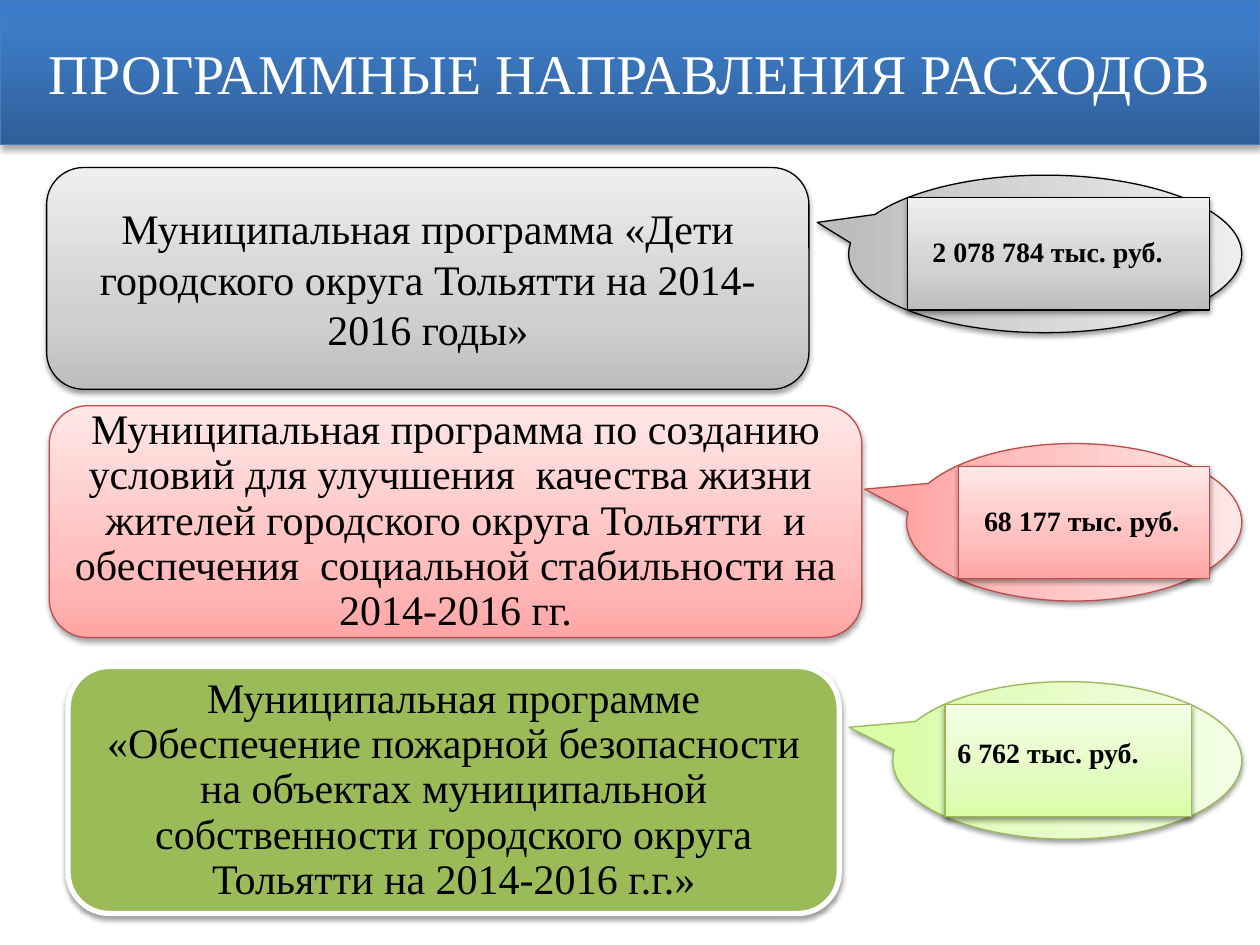
from copy import deepcopy
from dataclasses import dataclass
from typing import Any

from lxml.etree import SubElement
from pptx import Presentation
from pptx.dml.color import RGBColor
from pptx.enum.shapes import MSO_SHAPE
from pptx.enum.text import MSO_ANCHOR, PP_ALIGN
from pptx.oxml.ns import qn
from pptx.util import Inches, Pt

BLACK = RGBColor(0x00, 0x00, 0x00)
WHITE = RGBColor(0xFF, 0xFF, 0xFF)
GREEN = RGBColor(0x9B, 0xBB, 0x59)
HEADER_LINE = RGBColor(0x4B, 0x7E, 0xBC)
RED_LINE = RGBColor(0xBF, 0x4C, 0x48)
GREEN_LINE = RGBColor(0x98, 0xB9, 0x55)
HEADER_STOPS = [
    (0, RGBColor(0x2F, 0x5F, 0x99)),
    (0.8, RGBColor(0x3D, 0x7C, 0xC7)),
    (1, RGBColor(0x3A, 0x7C, 0xCB)),
]
GRAY_STOPS = [
    (0, RGBColor(0xBD, 0xBD, 0xBD)),
    (0.35, RGBColor(0xD1, 0xD1, 0xD1)),
    (1, RGBColor(0xEE, 0xEE, 0xEE)),
]
RED_STOPS = [
    (0, RGBColor(0xFF, 0xA6, 0xA5)),
    (0.35, RGBColor(0xFF, 0xC0, 0xBF)),
    (1, RGBColor(0xFF, 0xE7, 0xE7)),
]
GREEN_STOPS = [
    (0, RGBColor(0xDA, 0xFD, 0xA7)),
    (0.35, RGBColor(0xE4, 0xFC, 0xC2)),
    (1, RGBColor(0xF5, 0xFF, 0xE7)),
]


def write_text(shape, text, size, color=BLACK, bold=False, align=PP_ALIGN.LEFT,
               anchor=MSO_ANCHOR.MIDDLE, spacing=None, side=0.1, end=0.05, font="Times New Roman"):
    """Write one formatted paragraph into a shape."""
    frame = shape.text_frame
    frame.word_wrap = True
    frame.vertical_anchor = anchor
    frame.margin_left = frame.margin_right = Inches(side)
    frame.margin_top = frame.margin_bottom = Inches(end)
    paragraph = frame.paragraphs[0]
    paragraph.alignment = align
    paragraph.line_spacing = spacing
    run = paragraph.add_run()
    run.text = text
    run.font.name = font
    run.font.size = Pt(size)
    run.font.bold = bold
    run.font.color.rgb = color


@dataclass
class ProgramSlide:
    """Draw program cards and amounts on a grid of 100 columns and 75 rows."""

    slide: Any
    cell: int = Inches(0.1)
    callout_rows: float = 12.5
    value_rows: float = 8.9
    callout_right: float = 98.55
    corner_share: float = 0.049

    def place(self, *cells):
        """Turn grid cells into slide lengths."""
        return [round(count * self.cell) for count in cells]

    def add_shadow(self, shape, opacity, distance):
        """Give a shape a soft shadow below it."""
        effects = SubElement(shape._element.spPr, qn("a:effectLst"))
        shadow = SubElement(effects, qn("a:outerShdw"), blurRad=str(Pt(3.1)),
                            dist=str(Pt(distance)), dir="5400000", rotWithShape="0")
        color = SubElement(shadow, qn("a:srgbClr"), val=str(BLACK))
        SubElement(color, qn("a:alpha"), val=str(opacity * 1000))

    def add_box(self, kind, at, fill, line, width=0.75, opacity=38, distance=1.6):
        """Add a preset shape with a plain or gradient fill."""
        shape = self.slide.shapes.add_shape(kind, *self.place(*at))
        if isinstance(fill, RGBColor):
            shape.fill.solid()
            shape.fill.fore_color.rgb = fill
        else:
            shape.fill.gradient()
            shape.fill.gradient_angle = 90
            stop_list = shape._element.spPr.find(qn("a:gradFill")).find(qn("a:gsLst"))
            stop_list.append(deepcopy(stop_list[0]))
            for stop, (position, color) in zip(shape.fill.gradient_stops, fill):
                stop.position = position
                stop.color.rgb = color
        shape.line.color.rgb = line
        shape.line.width = Pt(width)
        self.add_shadow(shape, opacity, distance)
        return shape

    def add_label(self, at, text, size, **style):
        """Add a text box."""
        box = self.slide.shapes.add_textbox(*self.place(*at))
        write_text(box, text, size, **style)

    def add_header(self, text):
        """Add the title band."""
        band = self.add_box(MSO_SHAPE.RECTANGLE, (0, 0, 100, 11.5), HEADER_STOPS,
                            HEADER_LINE, opacity=35, distance=1.8)
        write_text(band, text, 32, color=WHITE, align=PP_ALIGN.CENTER)

    def add_card(self, at, text, fill, line, width=0.75, spacing=0.9):
        """Add a rounded card with its text inside the corners."""
        self.add_box(MSO_SHAPE.ROUNDED_RECTANGLE, at, fill, line, width)
        left, top, columns, rows = at
        inset = rows * self.corner_share
        inner = (left + inset, top + inset, columns - 2 * inset, rows - 2 * inset)
        self.add_label(inner, text, 24, align=PP_ALIGN.CENTER, spacing=spacing)

    def add_amount(self, left, top, columns, length, stops, line, text=None, tip=(-0.21, 0.625)):
        """Add a sideways callout with an amount box in front of it."""
        middle = top + self.value_rows / 2
        center = self.callout_right - length / 2
        at = (center - self.callout_rows / 2, middle - length / 2, self.callout_rows, length)
        callout = self.add_box(MSO_SHAPE.OVAL_CALLOUT, at, stops, line)
        callout.rotation = 90
        callout.adjustments[0], callout.adjustments[1] = tip
        box = self.add_box(MSO_SHAPE.RECTANGLE, (left, top, columns, self.value_rows), stops, line)
        if text:
            write_text(box, text, 16, bold=True, spacing=0.9, side=0.2, end=0.1)


def main():
    """Build and save the slide."""
    presentation = Presentation()
    presentation.slide_width, presentation.slide_height = Inches(10), Inches(7.5)
    page = ProgramSlide(presentation.slides.add_slide(presentation.slide_layouts[6]))
    page.add_header("ПРОГРАММНЫЕ НАПРАВЛЕНИЯ РАСХОДОВ")
    page.add_card(
        (3.7, 13.3, 60.5, 17.6),
        "Муниципальная программа «Дети городского округа Тольятти на 2014-2016 годы»",
        GRAY_STOPS, BLACK, spacing=None)
    page.add_card(
        (3.9, 32.2, 64.5, 18.4),
        "Муниципальная программа по созданию условий для улучшения  качества жизни  жителей "
        "городского округа Тольятти  и обеспечения  социальной стабильности на 2014-2016 гг.",
        RED_STOPS, RED_LINE)
    page.add_card(
        (5.4, 52.9, 61.2, 19.6),
        "Муниципальная программе «Обеспечение пожарной безопасности на объектах муниципальной "
        "собственности городского округа Тольятти на 2014-2016 г.г.»",
        GREEN, WHITE, width=3)
    page.add_amount(72, 15.7, 24, 31.2, GRAY_STOPS, BLACK, "2 078 784 тыс. руб.", tip=(-0.2, 0.58))
    page.add_amount(75, 55.9, 19.6, 27.7, GREEN_STOPS, GREEN_LINE)
    page.add_label((75, 57.9, 21.6, 3.7), "6 762 тыс. руб.", 16, bold=True, anchor=MSO_ANCHOR.TOP)
    page.add_amount(76.1, 37, 19.9, 26.6, RED_STOPS, RED_LINE, "68 177 тыс. руб.")
    presentation.save("out.pptx")


if __name__ == "__main__":
    main()
